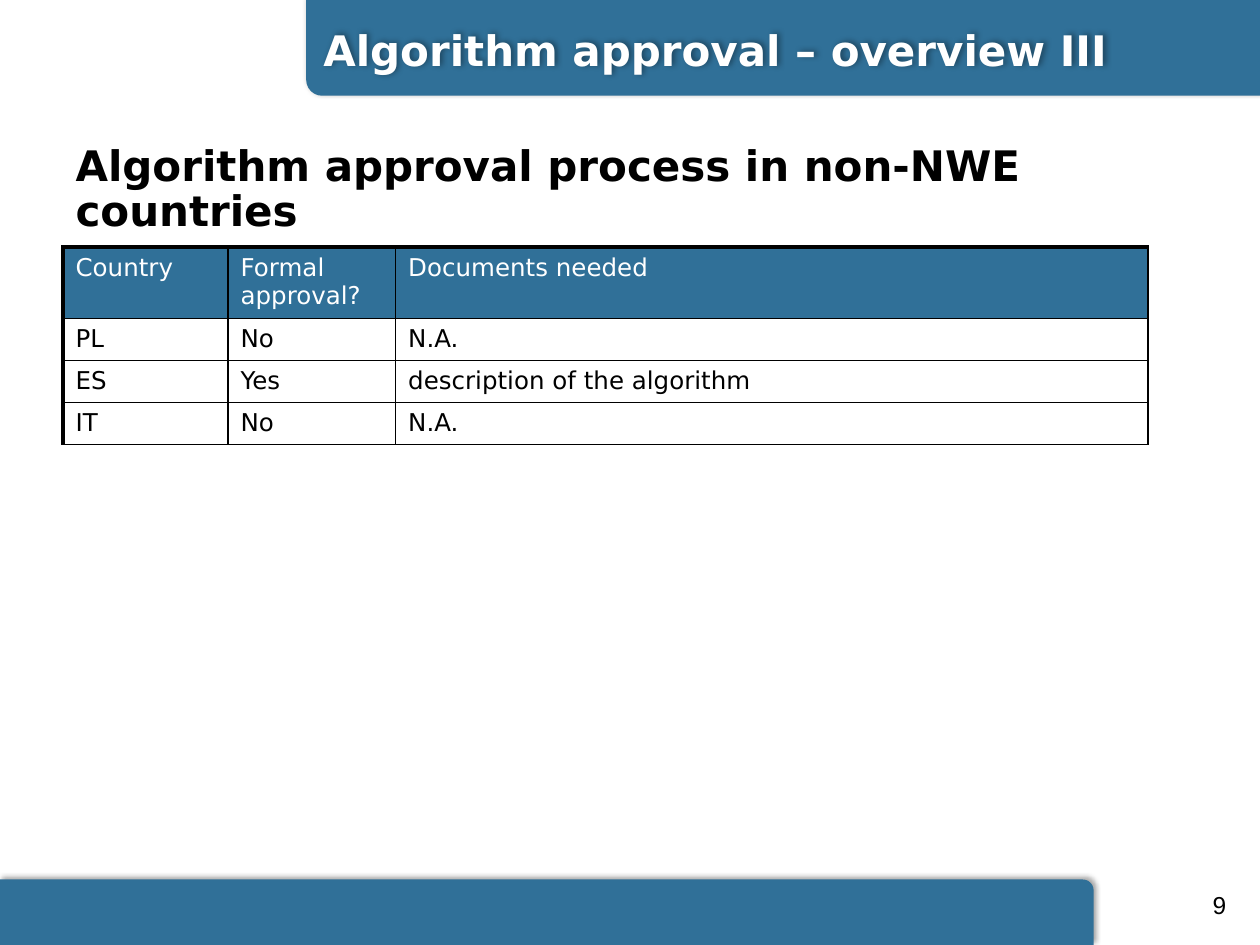
"""Build the algorithm approval slide with a country table."""
from pptx import Presentation, util as u
from pptx.dml.color import RGBColor
from pptx.enum import shapes, text
from pptx.oxml import parse_xml
from pptx.oxml.ns import nsdecls, qn

BLUE = RGBColor(0x30, 0x70, 0x98)
WHITE = RGBColor(0xFF, 0xFF, 0xFF)
BLACK = RGBColor(0, 0, 0)
FONT = "DejaVu Sans"
COLS = (1.31, 1.33, 5.97)
ROWS = (0.56, 0.33, 0.33, 0.33)
CELLS = (
    ("Country", "Formal approval?", "Documents needed"),
    ("PL", "No", "N.A."),
    ("ES", "Yes", "description of the algorithm"),
    ("IT", "No", "N.A."),
)


def write(frame, words, size, color, bold=False, font=FONT, align=text.PP_ALIGN.LEFT):
    """Fill a text frame with one styled paragraph."""
    frame.text = words
    para = frame.paragraphs[0]
    para.alignment = align
    para.font.name = font
    para.font.size = u.Pt(size)
    para.font.bold = bold
    para.font.color.rgb = color


def panel(slide, kind, box, fill=None, turn=0):
    """Add a borderless shape with a soft shadow."""
    shape = slide.shapes.add_shape(kind, *map(u.Inches, box))
    shape.rotation = turn
    if fill is None:
        shape.fill.background()
    else:
        shape.fill.solid()
        shape.fill.fore_color.rgb = fill
    shape.line.fill.background()
    shape.shadow.inherit = False
    shape._element.spPr.find(qn("a:effectLst")).append(parse_xml(
        f'<a:outerShdw {nsdecls("a")} blurRad="{u.Pt(3.1)}" dist="{u.Pt(1.8)}" '
        f'dir="{306 * 60000}"><a:srgbClr val="{BLACK}"><a:alpha val="35000"/>'
        '</a:srgbClr></a:outerShdw>'))
    return shape


def edge(cell, side, width):
    """Draw one black border of a cell."""
    cell._tc.get_or_add_tcPr().append(parse_xml(
        f'<a:ln{side} {nsdecls("a")} w="{u.Pt(width)}"><a:solidFill>'
        f'<a:srgbClr val="{BLACK}"/></a:solidFill></a:ln{side}>'))


def grid(slide, left, top):
    """Add the country table."""
    size = u.Inches(sum(COLS)), u.Inches(sum(ROWS))
    table = slide.shapes.add_table(
        len(ROWS), len(COLS), u.Inches(left), u.Inches(top), *size).table
    table.first_row = table.horz_banding = False
    for col, width in zip(table.columns, COLS):
        col.width = u.Inches(width)
    for r, (row, height) in enumerate(zip(table.rows, ROWS)):
        row.height = u.Inches(height)
        for c, cell in enumerate(row.cells):
            write(cell.text_frame, CELLS[r][c], 14, BLACK if r else WHITE)
            edge(cell, "L", 1 if c else 2.25)
            edge(cell, "R", 1)
            edge(cell, "T", 1 if r else 2.25)
            edge(cell, "B", 1)
            if r:
                cell.fill.background()
            else:
                cell.fill.solid()
                cell.fill.fore_color.rgb = BLUE


def title(slide, words):
    """Place the slide title."""
    shape = slide.shapes.title
    shape.left, shape.top, shape.width, shape.height = map(
        u.Inches, (0.5, 1.1, 9.5, 0.76))
    frame = shape.text_frame
    write(frame, words, 24, BLACK, True)
    frame.auto_size = text.MSO_AUTO_SIZE.NONE
    frame.vertical_anchor = text.MSO_ANCHOR.TOP
    frame.paragraphs[0].line_spacing = 0.9


def number(slide, words):
    """Add the page number."""
    box = slide.shapes.add_textbox(*map(u.Inches, (7.5, 6.98, 2.33, 0.4)))
    frame = box.text_frame
    frame.word_wrap = True
    frame.vertical_anchor = text.MSO_ANCHOR.MIDDLE
    write(frame, words, 14, BLACK, font="Arial", align=text.PP_ALIGN.RIGHT)


def main():
    """Build and save the slide."""
    deck = Presentation()
    deck.slide_width, deck.slide_height = u.Inches(10), u.Inches(7.5)
    slide = deck.slides.add_slide(deck.slide_layouts[5])
    kind = shapes.MSO_SHAPE
    panel(slide, kind.ROUND_1_RECTANGLE, (0, 6.98, 8.68, 0.52), BLUE)
    panel(slide, kind.ROUND_1_RECTANGLE, (2.43, 0, 7.57, 0.76), BLUE, 180)
    number(slide, "9")
    title(slide, "Algorithm approval process in non-NWE countries")
    grid(slide, 0.5, 1.96)
    head = panel(slide, kind.ROUNDED_RECTANGLE, (2.43, 0, 7.6, 0.79))
    write(head.text_frame, "Algorithm approval – overview III", 24, WHITE, True)
    head.text_frame.vertical_anchor = text.MSO_ANCHOR.MIDDLE
    deck.save("out.pptx")


if __name__ == "__main__":
    main()
